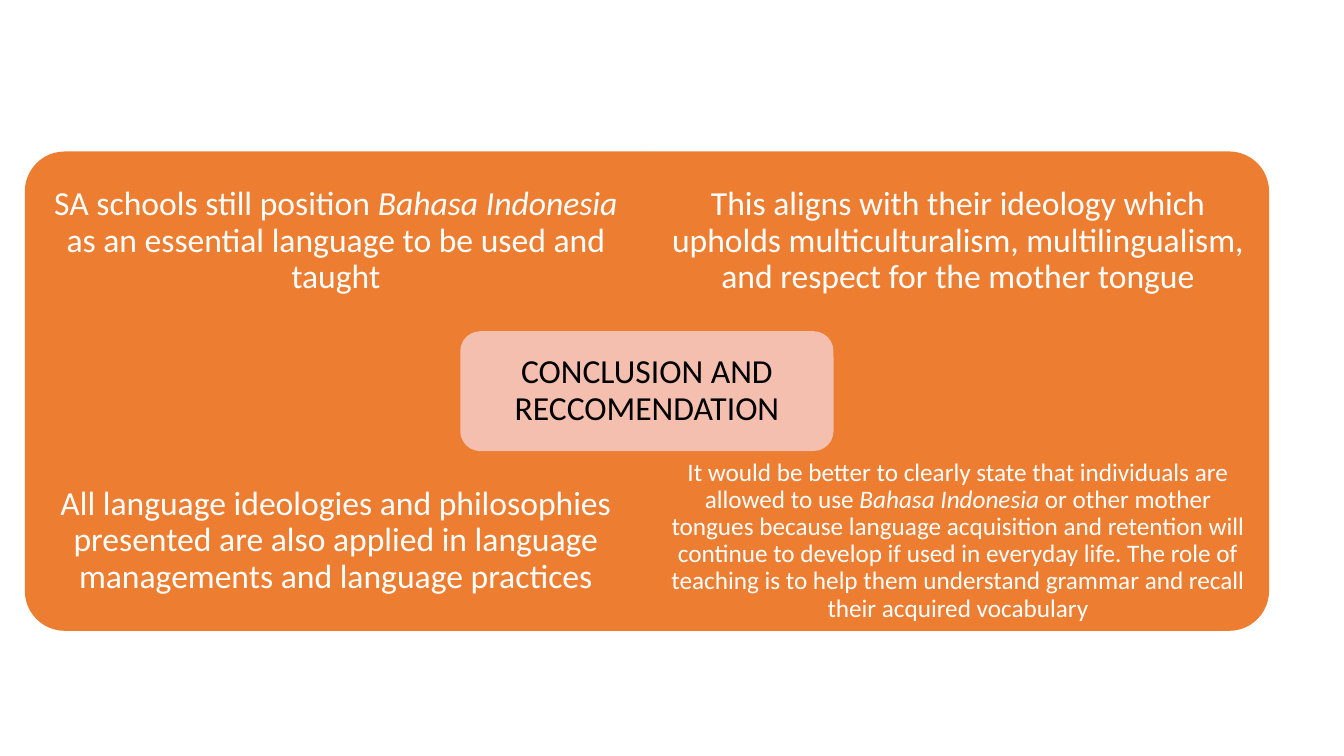
from dataclasses import dataclass

from pptx import Presentation
from pptx.dml.color import RGBColor
from pptx.enum.shapes import MSO_SHAPE
from pptx.enum.text import MSO_ANCHOR, PP_ALIGN
from pptx.util import Pt

ONE_ROUND_CORNER = MSO_SHAPE.ROUND_1_RECTANGLE
ROUNDED = MSO_SHAPE.ROUNDED_RECTANGLE
MIDDLE = MSO_ANCHOR.MIDDLE
CENTER = PP_ALIGN.CENTER


@dataclass(frozen=True)
class Theme:
    font: str = "Calibri"
    quadrant: RGBColor = RGBColor(0xED, 0x7D, 0x31)
    hub: RGBColor = RGBColor(0xF4, 0xBF, 0xAE)
    light: RGBColor = RGBColor(0xFF, 0xFF, 0xFF)
    dark: RGBColor = RGBColor(0, 0, 0)
    large: int = 24
    small: int = 18


THEME = Theme()
CENTER_X, CENTER_Y = 462.1, 279.4
QUADRANT_W, QUADRANT_H = 444.4, 171.2
MESSAGE_H = QUADRANT_H * 0.75
HUB_W, HUB_H = QUADRANT_W * 0.6, QUADRANT_H / 2
LANGUAGE = ("Bahasa Indonesia", True)

QUADRANTS = [
    (0, 0, 270, THEME.large, 13.4, [
        ("SA schools still position ", False), LANGUAGE,
        (" as an essential language to be used and taught", False)]),
    (1, 0, 0, THEME.large, 13.4, [
        ("This aligns with their ideology which upholds multiculturalism, "
         "multilingualism, and respect for the mother tongue", False)]),
    (0, 1, 180, THEME.large, 13.4, [
        ("All language ideologies and philosophies presented are also applied "
         "in language managements and language practices", False)]),
    (1, 1, 90, THEME.small, 10.1, [
        ("It would be better to clearly state that individuals are allowed to use ", False),
        LANGUAGE,
        (" or other mother tongues because language acquisition and retention will "
         "continue to develop if used in everyday life. The role of teaching is to "
         "help them understand grammar and recall their acquired vocabulary", False)]),
]


def add_panel(slide, kind, left, top, width, height, color):
    panel = slide.shapes.add_shape(kind, Pt(left), Pt(top), Pt(width), Pt(height))
    panel.shadow.inherit = False
    panel.fill.solid()
    panel.fill.fore_color.rgb = color
    panel.line.fill.background()
    return panel


def write_message(holder, runs, size, color, inset):
    frame = holder.text_frame
    frame.word_wrap = True
    frame.vertical_anchor = MIDDLE
    frame.margin_left = frame.margin_right = Pt(inset)
    frame.margin_top = frame.margin_bottom = Pt(inset)
    message = frame.paragraphs[0]
    message.alignment = CENTER
    message.line_spacing = 0.9
    for words, italic in runs:
        run = message.add_run()
        run.text = words
        run.font.name = THEME.font
        run.font.size = Pt(size)
        run.font.italic = italic
        run.font.color.rgb = color


def add_quadrant(slide, column, row, rotation, size, inset, runs):
    left = CENTER_X + (column - 1) * QUADRANT_W
    top = CENTER_Y + (row - 1) * QUADRANT_H
    width, height = QUADRANT_W, QUADRANT_H
    if rotation % 180:
        width, height = height, width
    panel = add_panel(slide, ONE_ROUND_CORNER, left + (QUADRANT_W - width) / 2,
                      top + (QUADRANT_H - height) / 2, width, height, THEME.quadrant)
    panel.rotation = rotation
    message_top = top + row * (QUADRANT_H - MESSAGE_H)
    message = slide.shapes.add_textbox(
        Pt(left), Pt(message_top), Pt(QUADRANT_W), Pt(MESSAGE_H))
    write_message(message, runs, size, THEME.light, inset)


def add_hub(slide, title):
    hub = add_panel(slide, ROUNDED, CENTER_X - HUB_W / 2, CENTER_Y - HUB_H / 2,
                    HUB_W, HUB_H, THEME.hub)
    write_message(hub, [(title, False)], THEME.large, THEME.dark, 7.2)


def main():
    deck = Presentation()
    deck.slide_width, deck.slide_height = Pt(960), Pt(540)
    slide = deck.slides.add_slide(deck.slide_layouts[6])
    for quadrant in QUADRANTS:
        add_quadrant(slide, *quadrant)
    add_hub(slide, "CONCLUSION AND RECCOMENDATION")
    deck.save("out.pptx")


if __name__ == "__main__":
    main()
